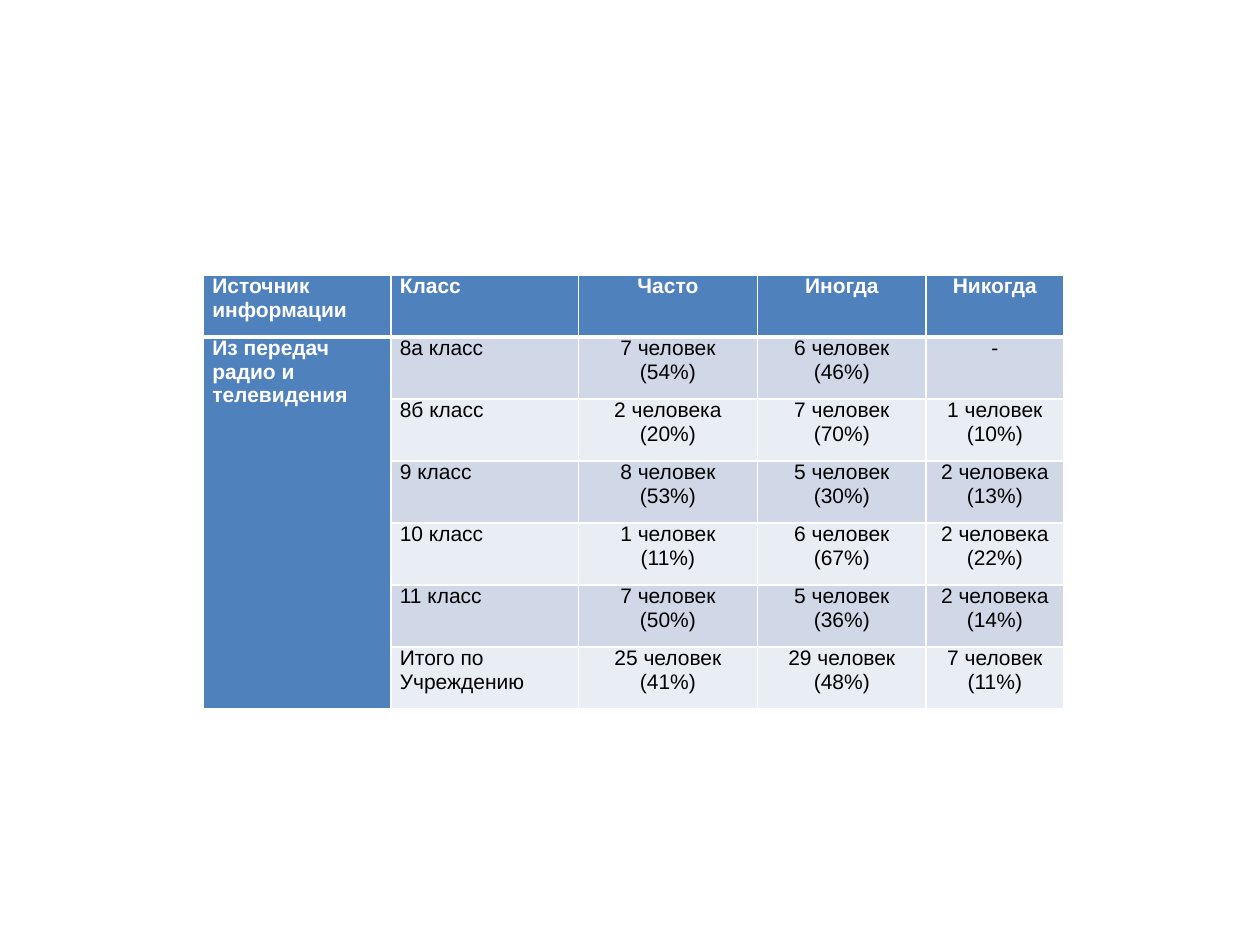
from dataclasses import dataclass

from lxml.etree import SubElement as Sub
from pptx import Presentation
from pptx.dml.color import RGBColor as Rgb
from pptx.enum.text import PP_ALIGN as Align
from pptx.oxml.ns import qn
from pptx.util import Cm, Pt


@dataclass(frozen=True)
class Theme:
    """Colours, font and sizes of the slide."""
    head: str = "4F81BD"
    bands: tuple = ("D0D8E8", "E9EDF4")
    light: str = "FFFFFF"
    dark: str = "000000"
    font: str = "Arial"
    size: float = 12
    thin: float = 1
    thick: float = 3


THEME = Theme()
WIDTHS = (3.78, 3.78, 3.61, 3.4, 2.77)
HEIGHT = 1.25
SOURCE = "Из передач радио и телевидения"
HEADS = ("Источник информации", "Класс", "Часто", "Иногда", "Никогда")
ROWS = (
    ("8а класс", "7 человек\n(54%)", "6 человек\n(46%)", "-"),
    ("8б класс", "2 человека\n(20%)", "7 человек\n(70%)", "1 человек\n(10%)"),
    ("9 класс", "8 человек\n(53%)", "5 человек\n(30%)", "2 человека\n(13%)"),
    ("10 класс", "1 человек\n(11%)", "6 человек\n(67%)", "2 человека\n(22%)"),
    ("11 класс", "7 человек\n(50%)", "5 человек\n(36%)", "2 человека\n(14%)"),
    ("Итого по Учреждению", "25 человек\n(41%)", "29 человек\n(48%)", "7 человек\n(11%)"),
)


def add_edges(cell, row):
    """Draw the cell borders, thick between the header and the body."""
    props = cell._tc.get_or_add_tcPr()
    heavy = {0: "lnB", 1: "lnT"}.get(row)
    for side in ("lnL", "lnR", "lnT", "lnB"):
        width = THEME.thick if side == heavy else THEME.thin
        line = Sub(props, qn(f"a:{side}"), w=str(Pt(width)))
        fill = Sub(line, qn("a:solidFill"))
        Sub(fill, qn("a:srgbClr"), val=THEME.light)


def paint(cell, row, colour):
    """Give the cell its borders, fill and margins."""
    add_edges(cell, row)
    cell.fill.solid()
    cell.fill.fore_color.rgb = Rgb.from_string(colour)
    cell.margin_left = cell.margin_right = Cm(0.18)
    cell.margin_top = cell.margin_bottom = 0


def write(cell, text, align, strong):
    """Fill the cell with formatted paragraphs."""
    cell.text = text
    for para in cell.text_frame.paragraphs:
        para.alignment = align
        font = para.font
        font.name = THEME.font
        font.size = Pt(THEME.size)
        font.bold = strong
        font.color.rgb = Rgb.from_string(THEME.light if strong else THEME.dark)


def pick_align(row, col):
    """Return the alignment for a place in the table."""
    if col > 1:
        return Align.CENTER
    left = (row == 1 and col == 0) or row == len(ROWS)
    return Align.LEFT if left else Align.JUSTIFY


def add_grid(slide):
    """Add the survey table."""
    data = [HEADS] + [(SOURCE if i == 0 else "", *row) for i, row in enumerate(ROWS)]
    frame = slide.shapes.add_table(
        len(data), len(HEADS), Cm(4.1), Cm(5.54), Cm(sum(WIDTHS)), Cm(HEIGHT * len(data)))
    table = frame.table
    table.first_col = True
    for col, width in zip(table.columns, WIDTHS):
        col.width = Cm(width)
    for r, texts in enumerate(data):
        table.rows[r].height = Cm(HEIGHT)
        for c, text in enumerate(texts):
            strong = r == 0 or c == 0
            cell = table.cell(r, c)
            paint(cell, r, THEME.head if strong else THEME.bands[(r - 1) % 2])
            write(cell, text, pick_align(r, c), strong)
    table.cell(1, 0).merge(table.cell(len(ROWS), 0))


def main():
    """Build and save the slide."""
    deck = Presentation()
    deck.slide_width, deck.slide_height = Cm(25.4), Cm(19.05)
    slide = deck.slides.add_slide(deck.slide_layouts[6])
    add_grid(slide)
    deck.save("out.pptx")


if __name__ == "__main__":
    main()
